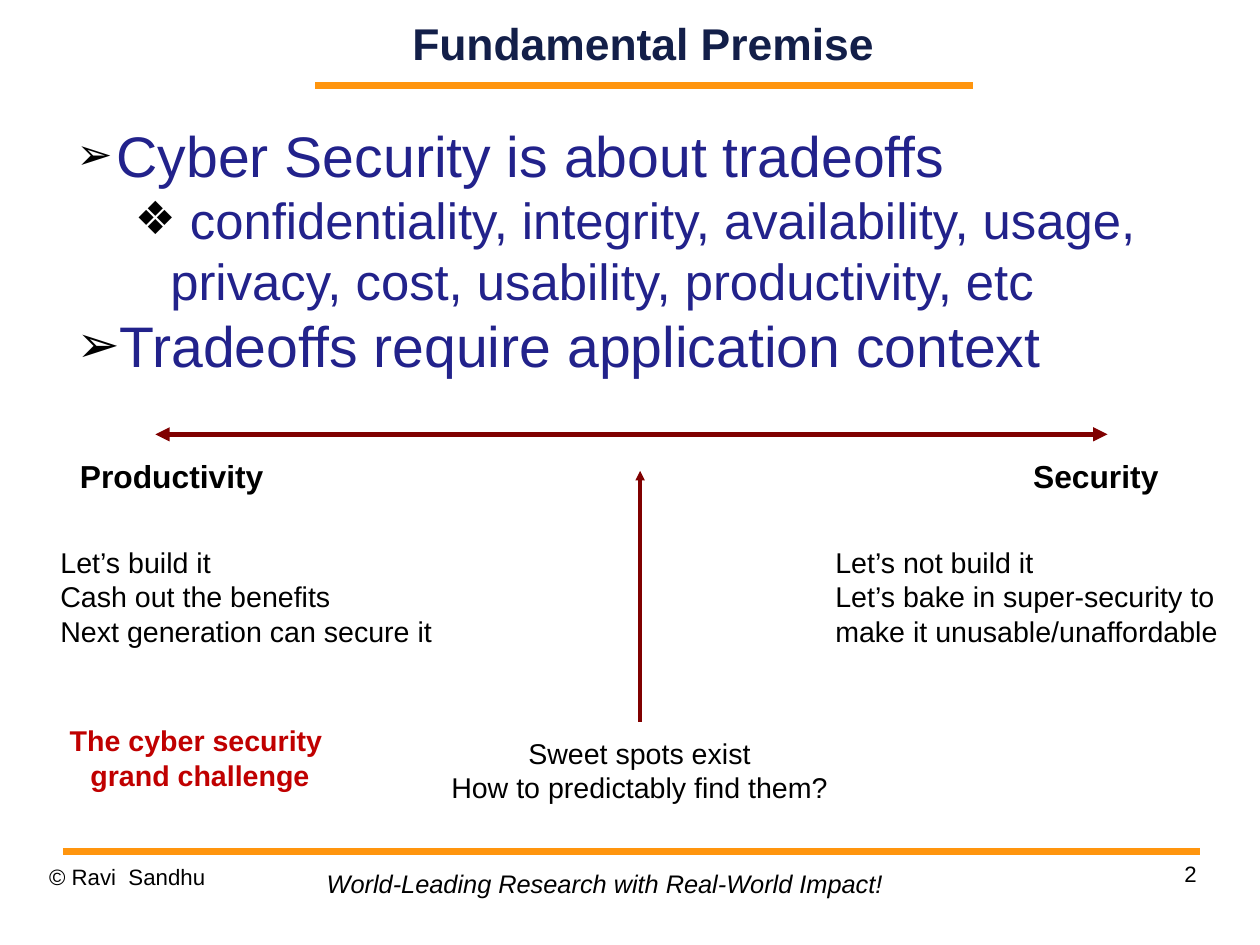
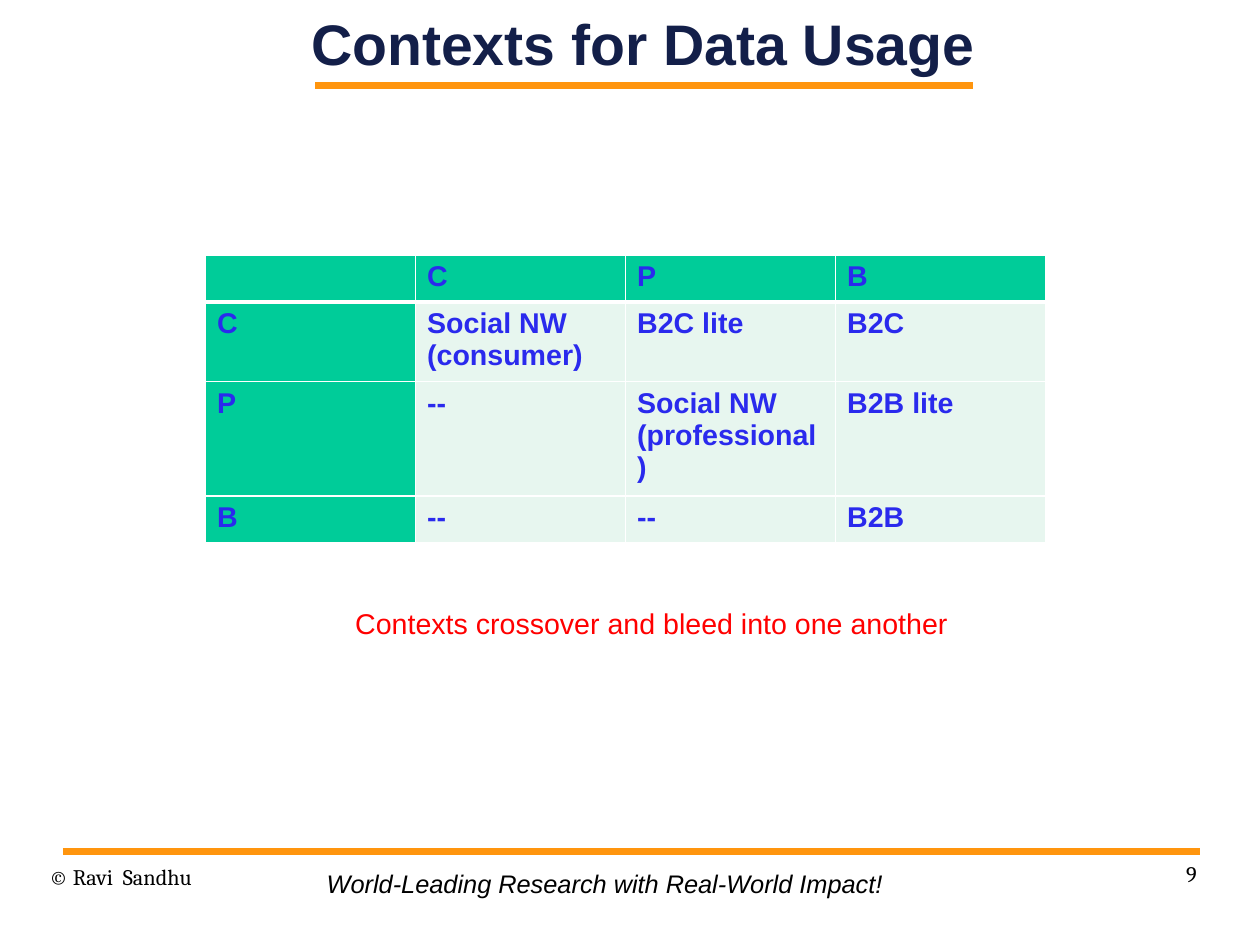
from lxml import etree
from pptx import Presentation
from pptx.dml.color import RGBColor
from pptx.enum.shapes import MSO_CONNECTOR
from pptx.enum.text import MSO_ANCHOR, MSO_AUTO_SIZE, PP_ALIGN
from pptx.oxml.ns import qn
from pptx.util import Inches, Pt

STRAIGHT = MSO_CONNECTOR.STRAIGHT
MIDDLE = MSO_ANCHOR.MIDDLE
FIT_SHAPE = MSO_AUTO_SIZE.SHAPE_TO_FIT_TEXT
NO_FIT = MSO_AUTO_SIZE.NONE
LEFT, CENTER, RIGHT = PP_ALIGN.LEFT, PP_ALIGN.CENTER, PP_ALIGN.RIGHT

BLACK = RGBColor(0x00, 0x00, 0x00)
NAVY = RGBColor(0x13, 0x1F, 0x49)
INDIGO = RGBColor(0x22, 0x22, 0x8B)
ORANGE = RGBColor(0xFF, 0x95, 0x0E)
MAROON = RGBColor(0x80, 0x00, 0x00)
CRIMSON = RGBColor(0xC0, 0x00, 0x00)
RED = RGBColor(0xFF, 0x00, 0x00)
GREEN = RGBColor(0x00, 0xCC, 0x99)
PALE_GREEN = RGBColor(0xE7, 0xF6, 0xEF)
CELL_BLUE = RGBColor(0x2A, 0x2A, 0xED)


def add_line(slide, start, end, color, width, arrow_ends=()):
    line = slide.shapes.add_connector(STRAIGHT, *map(Inches, start + end))
    line.line.color.rgb = color
    line.line.width = Pt(width)
    outline = line.line._get_or_add_ln()
    for arrow_end in arrow_ends:
        etree.SubElement(outline, qn(f"a:{arrow_end}"), type="triangle")
    etree.SubElement(line._element.spPr, qn("a:effectLst"))


def write_text(text_frame, lines, size, color=BLACK, align=LEFT, font="Arial",
               bold=False, italic=False, wrap=False, inset=True):
    text_frame.word_wrap = wrap
    text_frame.auto_size = NO_FIT if wrap else FIT_SHAPE
    if not inset:
        text_frame.margin_left = text_frame.margin_right = 0
        text_frame.margin_top = text_frame.margin_bottom = 0
    for index, line in enumerate(lines):
        paragraph = text_frame.paragraphs[0] if index == 0 else text_frame.add_paragraph()
        paragraph.alignment = align
        run = paragraph.add_run()
        run.text = line
        run.font.name = font
        run.font.size = Pt(size)
        run.font.bold = bold
        run.font.italic = italic
        run.font.color.rgb = color


# Page of 28 by 21 centimetres
presentation = Presentation()
presentation.slide_width = Inches(28 / 2.54)
presentation.slide_height = Inches(21 / 2.54)

# Shared title, rules and footer: title, size, left, width, number, footer font
slides = []
for title, title_size, left, width, number, footer_font in [
    ("Fundamental Premise", 28, 2.76, 5.73, "2", "Arial"),
    ("Contexts for Data Usage", 36, 2.41, 6.43, "9", "Cambria"),
]:
    slide = presentation.slides.add_slide(presentation.slide_layouts[5])
    slides.append(slide)
    add_line(slide, (2.76, 0.75), (8.51, 0.75), ORANGE, 4.31)
    add_line(slide, (0.55, 7.45), (10.5, 7.45), ORANGE, 4.31)

    heading = slide.shapes.title
    heading.left, heading.top = Inches(left), Inches(0)
    heading.width, heading.height = Inches(width), Inches(0.75)
    write_text(heading.text_frame, [title], title_size, NAVY, CENTER,
               bold=True, wrap=True, inset=False)
    heading.text_frame.vertical_anchor = MIDDLE

    for text, box_left, box_top, align in [
        ("© Ravi  Sandhu", 0.43, 7.55, LEFT),
        (number, 7.9, 7.53, RIGHT),
    ]:
        box = slide.shapes.add_textbox(Inches(box_left), Inches(box_top),
                                       Inches(2.57), Inches(0.57))
        write_text(box.text_frame, [text], 14, align=align, font=footer_font,
                   wrap=True, inset=False)
    motto = slide.shapes.add_textbox(Inches(2.76), Inches(7.55), Inches(5.08), Inches(0.37))
    write_text(motto.text_frame, ["World-Leading Research with Real-World Impact!"],
               16, italic=True)

premise_slide, contexts_slide = slides

# Premise bullets: text, size, level, left margin, hanging indent, symbol, symbol size
bullets = [
    ("Cyber Security is about tradeoffs", 36, 0, 0.47, -0.35, "➢", 75),
    (" confidentiality, integrity, availability, usage, privacy, cost, usability, "
     "productivity, etc", 32, 1, 0.94, -0.31, "❖", 90),
    ("Tradeoffs require application context", 36, 0, 0.47, -0.35, "➢", 90),
]
body = premise_slide.shapes.add_textbox(Inches(0.55), Inches(1.05), Inches(9.92), Inches(2.48))
write_text(body.text_frame, [bullet[0] for bullet in bullets], 36, INDIGO,
           wrap=True, inset=False)
for paragraph, (_, size, level, margin, indent, symbol, percent) in zip(
        body.text_frame.paragraphs, bullets):
    paragraph.level = level
    properties = paragraph._p.get_or_add_pPr()
    properties.set("marL", str(Inches(margin)))
    properties.set("indent", str(Inches(indent)))
    bullet_color = etree.SubElement(properties, qn("a:buClr"))
    etree.SubElement(bullet_color, qn("a:srgbClr"), val=str(BLACK))
    etree.SubElement(properties, qn("a:buSzPct"), val=str(percent * 1000))
    etree.SubElement(properties, qn("a:buFont"), typeface="Arial")
    etree.SubElement(properties, qn("a:buChar"), char=symbol)
    paragraph.runs[0].font.size = Pt(size)

# Tradeoff axis and the pointer to its middle
add_line(premise_slide, (1.36, 3.8), (9.69, 3.8), MAROON, 3, ("headEnd", "tailEnd"))
add_line(premise_slide, (5.6, 4.12), (5.6, 6.32), MAROON, 2, ("headEnd",))

# Labels: lines, left, top, width, height, size, colour, alignment, bold
for lines, left, top, width, height, size, color, align, bold in [
    (["Productivity"], 0.6, 3.95, 1.81, 0.43, 20, BLACK, LEFT, True),
    (["Security"], 8.94, 3.95, 1.3, 0.43, 20, BLACK, LEFT, True),
    (["Let’s build it", "Cash out the benefits", "Next generation can secure it"],
     0.43, 4.72, 3.45, 1, 18, BLACK, LEFT, False),
    (["Let’s not build it", "Let’s bake in super-security to",
      "make it unusable/unaffordable"], 7.21, 4.72, 3.58, 1, 18, BLACK, LEFT, False),
    (["Sweet spots exist", "How to predictably find them?"],
     3.83, 6.39, 3.53, 0.71, 18, BLACK, CENTER, False),
    (["The cyber security ", "grand challenge"],
     0.5, 6.28, 2.5, 0.71, 18, CRIMSON, CENTER, True),
]:
    label = premise_slide.shapes.add_textbox(Inches(left), Inches(top),
                                             Inches(width), Inches(height))
    write_text(label.text_frame, lines, size, color, align, bold=bold)

# Table of contexts
context_rows = [
    ["", "C", "P", "B"],
    ["C", "Social NW\n(consumer)", "B2C lite", "B2C"],
    ["P", "--", "Social NW (professional)", "B2B lite"],
    ["B", "--", "--", "B2B"],
]
row_heights = [0.41, 0.69, 1, 0.41]
table = contexts_slide.shapes.add_table(
    4, 4, Inches(1.8), Inches(2.23), Inches(7.35), Inches(sum(row_heights))).table
for row_index, (texts, height) in enumerate(zip(context_rows, row_heights)):
    table.rows[row_index].height = Inches(height)
    for column_index, text in enumerate(texts):
        cell = table.cell(row_index, column_index)
        cell_properties = cell._tc.get_or_add_tcPr()
        for side in ("L", "R", "T", "B"):
            heavy = (row_index, side) in [(0, "B"), (1, "T")]
            border = etree.SubElement(cell_properties, qn(f"a:ln{side}"),
                                      w=str(Pt(3 if heavy else 1)))
            border_fill = etree.SubElement(border, qn("a:solidFill"))
            etree.SubElement(border_fill, qn("a:srgbClr"), val="FFFFFF")
        cell.fill.solid()
        is_heading = row_index == 0 or column_index == 0
        cell.fill.fore_color.rgb = GREEN if is_heading else PALE_GREEN
        if text:
            for line_index, line in enumerate(text.split("\n")):
                text_frame = cell.text_frame
                paragraph = text_frame.add_paragraph() if line_index else text_frame.paragraphs[0]
                run = paragraph.add_run()
                run.text = line
                run.font.name = "Arial"
                run.font.size = Pt(18)
                run.font.bold = True
                run.font.color.rgb = CELL_BLUE

# Remark under the table
remark = contexts_slide.shapes.add_textbox(Inches(3.01), Inches(5.25), Inches(5.43), Inches(0.4))
write_text(remark.text_frame, ["Contexts crossover and bleed into one another"], 18, RED)

presentation.save("out.pptx")
